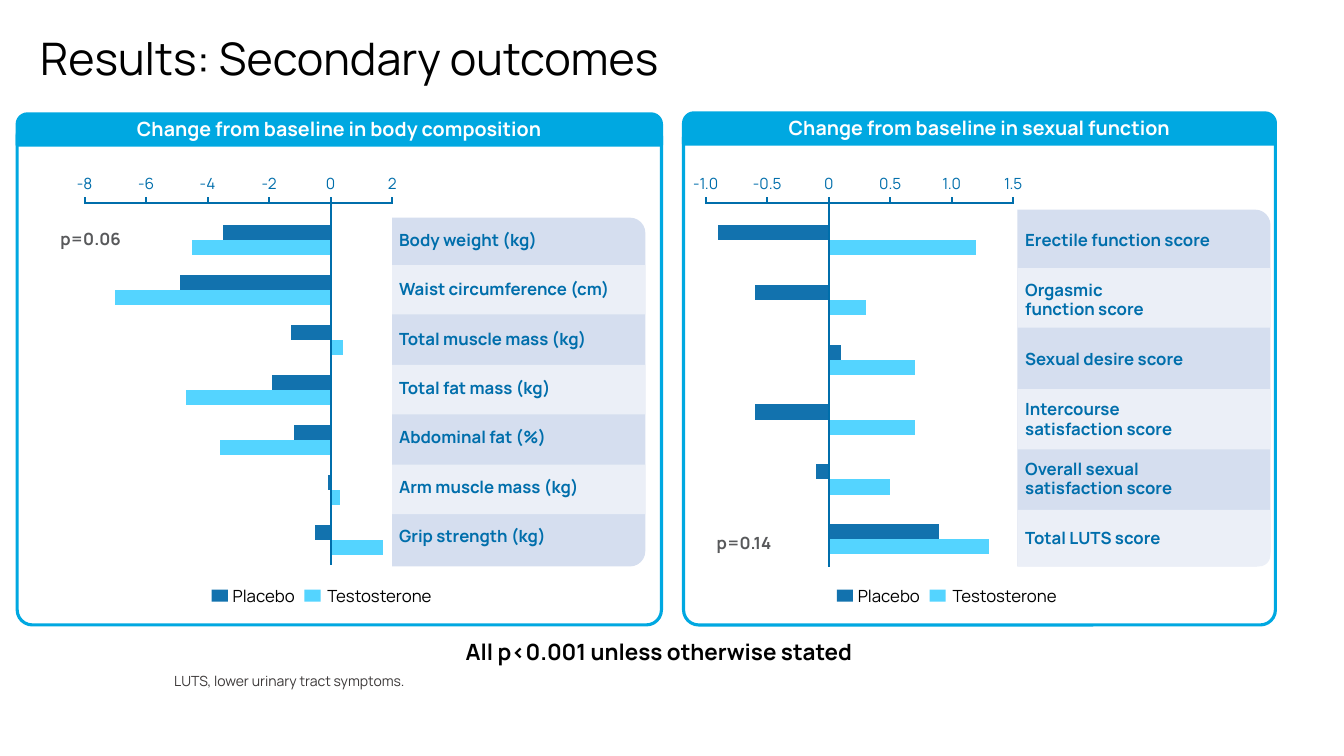
import pptx
import pptx.chart.data
import pptx.dml.color
import pptx.enum.chart
import pptx.enum.shapes
import pptx.enum.text
import pptx.oxml
import pptx.oxml.ns
import pptx.util

Inches = pptx.util.Inches
Pt = pptx.util.Pt
SHAPE = pptx.enum.shapes.MSO_SHAPE
ALIGN = pptx.enum.text.PP_ALIGN
ANCHOR = pptx.enum.text.MSO_ANCHOR
NS = pptx.oxml.ns.nsdecls
qn = pptx.oxml.ns.qn
rgb = pptx.dml.color.RGBColor.from_string


class Theme:
    font = "Manrope"
    black, white, grey, footnote = "000000", "FFFFFF", "58595B", "3B3838"
    frame, axis = "00A8E1", "006EAB"
    placebo, testosterone = "1272AE", "54D4FF"
    row_dark, row_light = "D5DEEF", "EBEFF7"
    title, closing, header, label, tick, note = 32, 16, 14, 12, 11, 10
    line, border = 1.5, 2.25


prs = pptx.Presentation()
prs.slide_width, prs.slide_height = Inches(13.33), Inches(7.5)
s = prs.slides.add_slide(prs.slide_layouts[6])


def add_box(kind, x, y, w, h, fill=None, line=None, adj=None, turned=False):
    """Add a shape covering the given area; turned rotates it by 90 degrees."""
    if turned:
        x, y, w, h = x + (w - h) / 2, y + (h - w) / 2, h, w
    sp = s.shapes.add_shape(kind, Inches(x), Inches(y), Inches(w), Inches(h))
    sp.shadow.inherit = False
    sp.rotation = 90 if turned else 0
    if adj is not None:
        sp.adjustments[0] = adj
    if fill:
        sp.fill.solid()
        sp.fill.fore_color.rgb = rgb(fill)
    else:
        sp.fill.background()
    if line:
        sp.line.color.rgb = rgb(line)
        sp.line.width = Pt(Theme.border)
    else:
        sp.line.fill.background()
    return sp


def add_text(text, area=None, sp=None, size=Theme.label, color=Theme.black, bold=False,
             align=ALIGN.LEFT, anchor=ANCHOR.TOP, spacing=None, tab=None):
    """Write into the shape sp, or into a new text box covering area."""
    if sp is None:
        sp = s.shapes.add_textbox(*[Inches(v) for v in area])
    else:
        sp.text_frame.margin_top = sp.text_frame.margin_bottom = 0
    tf = sp.text_frame
    tf.word_wrap = True
    tf.vertical_anchor = anchor
    p = tf.paragraphs[0]
    p.text = text
    p.alignment = align
    if spacing:
        p.line_spacing = spacing
    if tab:
        p._p.get_or_add_pPr().append(pptx.oxml.parse_xml(
            f'<a:tabLst {NS("a")}><a:tab pos="{Inches(tab)}" algn="l"/></a:tabLst>'))
    for r in p.runs:
        r.font.name, r.font.size, r.font.bold = Theme.font, Pt(size), bold
        r.font.color.rgb = rgb(color)


add_text("Results: Secondary outcomes", (0.3, 0.15, 9, 0.91), size=Theme.title,
         anchor=ANCHOR.MIDDLE, spacing=0.9)

panels = [
    dict(
        header="Change from baseline in body composition",
        frame=(0.17, 1.2, 6.39, 5), header_top=1.13,
        axis_left=0.84, low=-8, high=2, ticks=["-8", "-6", "-4", "-2", "0", "2"],
        pitch=0.495, zero_end=5.61,
        rows=(3.89, 2.16, 2.51, 3.46), light_top=2.63, light_step=0.99,
        light_heights=[0.49] * 3,
        label_left=3.86, label_step=0.49, label_spacing=0.99, legend_left=2.21,
        p_value="p=0.06", p_at=(0.5, 2.22),
        outcomes=[
            ("Body weight (kg)", -3.5, -4.5),
            ("Waist circumference (cm)", -4.9, -7.0),
            ("Total muscle mass (kg)", -1.3, 0.4),
            ("Total fat mass (kg)", -1.9, -4.7),
            ("Abdominal fat (%)", -1.2, -3.6),
            ("Arm muscle mass (kg)", -0.1, 0.3),
            ("Grip strength (kg)", -0.5, 1.7),
        ]),
    dict(
        header="Change from baseline in sexual function",
        frame=(6.78, 1.21, 5.87, 4.99), header_top=1.12,
        axis_left=7, low=-1, high=1.5, ticks=["-1.0", "-0.5", "0", "0.5", "1.0", "1.5"],
        pitch=0.593, zero_end=5.63,
        rows=(10.09, 2.08, 2.51, 3.54), light_top=2.66, light_step=1.2,
        light_heights=[0.59, 0.6, 0.56],
        label_left=10.07, label_step=0.593, label_spacing=0.95, legend_left=8.41,
        p_value="p=0.14", p_at=(7.01, 5.24),
        outcomes=[
            ("Erectile function score", -0.9, 1.2),
            ("Orgasmic\vfunction score", -0.6, 0.3),
            ("Sexual desire score", 0.1, 0.7),
            ("Intercourse\vsatisfaction score", -0.6, 0.7),
            ("Overall sexual\vsatisfaction score", -0.1, 0.5),
            ("Total LUTS score", 0.9, 1.3),
        ]),
]
axis_width, axis_y, first_row, bar = 3.05, 2.01, 2.385, 0.15

for panel in panels:
    # Frame and header
    x, y, w, h = panel["frame"]
    add_box(SHAPE.ROUNDED_RECTANGLE, x, y, w, h, line=Theme.frame, adj=0.03)
    sp = add_box(SHAPE.ROUND_2_SAME_RECTANGLE, x, panel["header_top"], w, 0.31,
                 fill=Theme.frame, line=Theme.frame, adj=0.33)
    add_text(panel["header"], sp=sp, size=Theme.header, color=Theme.white, bold=True,
             align=ALIGN.CENTER)
    add_text(panel["p_value"], (*panel["p_at"], 1.01, 0.3), color=Theme.grey, bold=True)

    # Bars
    left, pitch, outcomes = panel["axis_left"], panel["pitch"], panel["outcomes"]
    names, placebo, testosterone = zip(*outcomes)
    data = pptx.chart.data.CategoryChartData()
    data.categories = [name.replace("\v", " ") for name in names]
    data.add_series("Placebo", placebo)
    data.add_series("Testosterone", testosterone)
    chart = s.shapes.add_chart(
        pptx.enum.chart.XL_CHART_TYPE.BAR_CLUSTERED, Inches(left),
        Inches(first_row - pitch / 2), Inches(axis_width),
        Inches(pitch * len(outcomes)), data).chart
    chart.has_legend = chart.has_title = False
    chart.font.name, chart.font.size = Theme.font, Pt(Theme.tick)
    chart.font.color.rgb = rgb(Theme.axis)
    chart.value_axis.minimum_scale = panel["low"]
    chart.value_axis.maximum_scale = panel["high"]
    chart.value_axis.has_major_gridlines = False
    chart.category_axis.reverse_order = True
    chart.value_axis.visible = chart.category_axis.visible = False
    plot = chart.plots[0]
    plot.vary_by_categories = False
    plot.overlap = 0
    plot.gap_width = round((pitch / bar - 2) * 100)
    for series, color in zip(plot.series, (Theme.placebo, Theme.testosterone)):
        series.invert_if_negative = False
        series.format.fill.solid()
        series.format.fill.fore_color.rgb = rgb(color)
    plot_area = chart._chartSpace.chart.plotArea
    for layout in plot_area.findall(qn("c:layout")):
        plot_area.remove(layout)
    plot_area.insert(0, pptx.oxml.parse_xml(
        f'<c:layout {NS("c")}><c:manualLayout><c:layoutTarget val="inner"/>'
        '<c:xMode val="edge"/><c:yMode val="edge"/><c:x val="0"/><c:y val="0"/>'
        '<c:w val="1"/><c:h val="1"/></c:manualLayout></c:layout>'))

    # Scale above the bars and zero line through them
    zero = left - panel["low"] / (panel["high"] - panel["low"]) * axis_width
    lines = [(left, axis_y, left + axis_width, axis_y),
             (zero, axis_y, zero, panel["zero_end"])]
    for i, tick in enumerate(panel["ticks"]):
        tick_x = left + i * axis_width / (len(panel["ticks"]) - 1)
        lines.append((tick_x, 2.02, tick_x, 1.95))
        add_text(tick, (tick_x - 0.35, 1.67, 0.7, 0.29), size=Theme.tick,
                 color=Theme.axis, align=ALIGN.CENTER, anchor=ANCHOR.MIDDLE)
    for ends in lines:
        c = s.shapes.add_connector(pptx.enum.shapes.MSO_CONNECTOR.STRAIGHT,
                                   *[Inches(v) for v in ends])
        c.line.color.rgb = rgb(Theme.axis)
        c.line.width = Pt(Theme.line)
        c._element.spPr.append(pptx.oxml.parse_xml(f'<a:effectLst {NS("a")}/>'))

    # Outcome labels on banded rows
    x, y, w, h = panel["rows"]
    add_box(SHAPE.ROUND_2_SAME_RECTANGLE, x, y, w, h, fill=Theme.row_dark, adj=0.06,
            turned=True)
    for i, height in enumerate(panel["light_heights"]):
        row_y = panel["light_top"] + i * panel["light_step"]
        if len(outcomes) == 2 * (i + 1):
            add_box(SHAPE.ROUND_1_RECTANGLE, x, row_y, w, height, fill=Theme.row_light,
                    adj=0.2, turned=True)
        else:
            add_box(SHAPE.RECTANGLE, x, row_y, w, height, fill=Theme.row_light)
    for i, name in enumerate(names):
        label_y = first_row + i * panel["label_step"] - 0.24
        add_text(name, (panel["label_left"], label_y, 2.5, 0.48),
                 color=Theme.axis, bold=True, anchor=ANCHOR.MIDDLE,
                 spacing=panel["label_spacing"])

    # Legend
    x = panel["legend_left"]
    add_text("Placebo\tTestosterone", (x, 5.76, 2.77, 0.3), tab=0.94)
    for offset, color in ((-0.11, Theme.placebo), (0.81, Theme.testosterone)):
        add_box(SHAPE.RECTANGLE, x + offset, 5.85, 0.16, 0.12, fill=color)

add_text("All p<0.001 unless otherwise stated", (4.46, 6.28, 4.15, 0.37),
         size=Theme.closing, bold=True, align=ALIGN.CENTER)
add_text("LUTS, lower urinary tract symptoms.", (1.63, 6.64, 2.86, 0.25),
         size=Theme.note, color=Theme.footnote, anchor=ANCHOR.BOTTOM, spacing=0.9)

prs.save("out.pptx")
